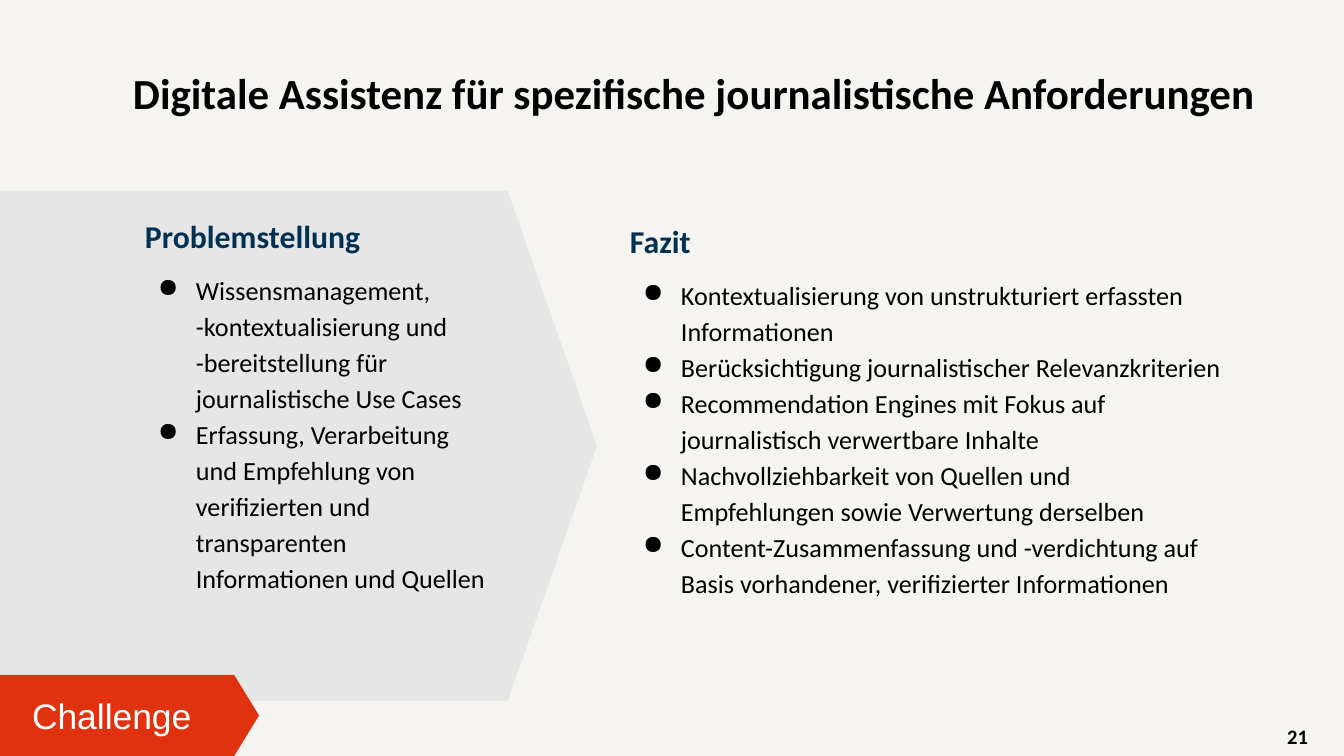
from lxml.etree import SubElement
from pptx import Presentation
from pptx.dml.color import RGBColor as RGB
from pptx.enum.shapes import MSO_SHAPE as SHAPE
from pptx.enum.text import MSO_ANCHOR as ANCHOR, MSO_AUTO_SIZE as AUTO_SIZE, PP_ALIGN as ALIGN
from pptx.oxml.ns import qn
from pptx.util import Pt

EMU_PER_PX = 914400 / 134.4

THEME = {
    "background": "F6F4F0", "panel": "E7E6E6", "accent": "E1320F",
    "heading": "003154", "text": "000000", "on_accent": "FFFFFF",
    "font": "Calibri", "label_font": "Arial",
    "title_size": 23, "heading_size": 17, "body_size": 14,
    "label_size": 19, "number_size": 11,
}


def px(*lengths):
    return [round(length * EMU_PER_PX) for length in lengths]


def style(para, size, color, bold=False, font="font"):
    for span in para.runs:
        span.font.name = THEME[font]
        span.font.size = Pt(THEME[size])
        span.font.color.rgb = RGB.from_string(THEME[color])
        span.font.bold = bold


deck = Presentation()
deck.slide_width, deck.slide_height = px(1344, 756)
page = deck.slides.add_slide(deck.slide_layouts[5])
page.background.fill.solid()
page.background.fill.fore_color.rgb = RGB.from_string(THEME["background"])

# Arrow-shaped panels: the problem area and the label at the bottom
for area, point, color in [
    ((-74, 191, 671, 510), 0.175, "panel"),
    ((0, 675, 259, 81), 0.306, "accent"),
]:
    panel = page.shapes.add_shape(SHAPE.PENTAGON, *px(*area))
    panel.adjustments[0] = point
    panel.shadow.inherit = False
    panel.fill.solid()
    panel.fill.fore_color.rgb = RGB.from_string(THEME[color])
    panel.line.fill.background()

# Title
title = page.shapes.title
title.left, title.top, title.width, title.height = px(124, 55, 1158, 81)
frame = title.text_frame
frame.text = "Digitale Assistenz für spezifische journalistische Anforderungen"
frame.auto_size = AUTO_SIZE.NONE
frame.vertical_anchor = ANCHOR.MIDDLE
frame.margin_left, frame.margin_right = px(9, 9)
frame.paragraphs[0].alignment = ALIGN.LEFT
frame.paragraphs[0].line_spacing = 0.9
style(frame.paragraphs[0], "title_size", "text", bold=True)

# Two columns: a heading followed by bullets
columns = [
    ((136, 212, 363, 438), "Problemstellung", [
        "Wissensmanagement, -kontextualisierung und -bereitstellung für journalistische Use Cases",
        "Erfassung, Verarbeitung und Empfehlung von verifizierten und transparenten "
        "Informationen und Quellen",
    ]),
    ((621, 217, 612, 438), "Fazit", [
        "Kontextualisierung von unstrukturiert erfassten Informationen",
        "Berücksichtigung journalistischer Relevanzkriterien",
        "Recommendation Engines mit Fokus auf journalistisch verwertbare Inhalte",
        "Nachvollziehbarkeit von Quellen und Empfehlungen sowie Verwertung derselben",
        "Content-Zusammenfassung und -verdichtung auf Basis vorhandener, "
        "verifizierter Informationen",
    ]),
]
bullet_margin, bullet_indent = px(51, -38)
for area, heading, bullets in columns:
    frame = page.shapes.add_textbox(*px(*area)).text_frame
    frame.word_wrap = True
    frame.margin_left, frame.margin_top, frame.margin_right, frame.margin_bottom = px(9, 9, 9, 9)
    para = frame.paragraphs[0]
    para.text = heading
    para.line_spacing = 0.9
    para.space_before = Pt(7.5)
    style(para, "heading_size", "heading", bold=True)
    for index, bullet in enumerate(bullets):
        para = frame.add_paragraph()
        para.text = bullet
        para.line_spacing = 1.15
        para.space_before = Pt(0 if index else 7.5)
        style(para, "body_size", "text")
        props = para._p.get_or_add_pPr()
        props.set("marL", str(bullet_margin))
        props.set("indent", str(bullet_indent))
        bullet_color = SubElement(props, qn("a:buClr"))
        SubElement(bullet_color, qn("a:srgbClr"), val=THEME["text"])
        SubElement(props, qn("a:buChar"), char="●")

# Label on the accent arrow and page number
for area, text, align, look in [
    ((23, 684, 195, 63), "Challenge", ALIGN.LEFT,
     ("label_size", "on_accent", False, "label_font")),
    ((1015, 716, 302, 40), "21", ALIGN.RIGHT, ("number_size", "text", True)),
]:
    frame = page.shapes.add_textbox(*px(*area)).text_frame
    frame.word_wrap = True
    frame.vertical_anchor = ANCHOR.MIDDLE
    frame.margin_left, frame.margin_right = px(9, 9)
    frame.text = text
    frame.paragraphs[0].alignment = align
    style(frame.paragraphs[0], *look)

deck.save("out.pptx")
